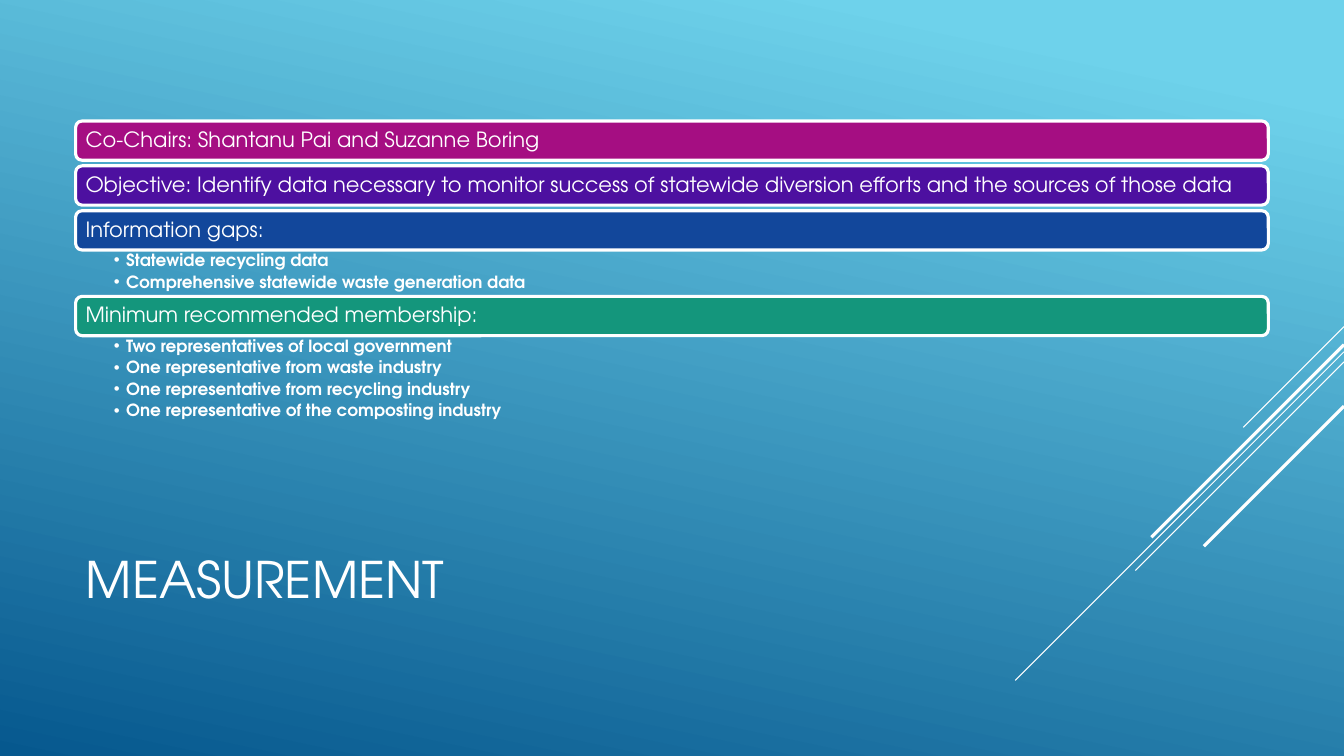
from lxml.etree import SubElement
from pptx import Presentation
from pptx.dml.color import RGBColor
from pptx.enum.shapes import MSO_CONNECTOR, MSO_SHAPE
from pptx.enum.text import MSO_ANCHOR, MSO_AUTO_SIZE, PP_ALIGN
from pptx.oxml.ns import qn
from pptx.util import Inches, Pt

WHITE = RGBColor(0xFF, 0xFF, 0xFF)
SKY = RGBColor(0x6E, 0xD2, 0xEB)
NAVY = RGBColor(0x06, 0x58, 0x8E)
PLUM = RGBColor(0xA5, 0x0E, 0x82)
VIOLET = RGBColor(0x4D, 0x10, 0xA0)
BLUE = RGBColor(0x12, 0x47, 0x9B)
GREEN = RGBColor(0x14, 0x96, 0x7C)
FONT = "TeX Gyre Adventor"
LEFT, WIDTH = 0.75, 11.83
BAR, STEP, ROW = 0.39, 0.445, 0.23


def place(shape, left, top, width, height):
    shape.left, shape.top = Inches(left), Inches(top)
    shape.width, shape.height = Inches(width), Inches(height)


def write(shape, lines, size, bold, insets, anchor, spacing):
    frame = shape.text_frame
    frame.text = "\n".join(lines)
    sides = dict(zip(("left", "top", "right", "bottom"), insets))
    for side, gap in sides.items():
        setattr(frame, "margin_" + side, Inches(gap))
    frame.word_wrap = True
    frame.auto_size = MSO_AUTO_SIZE.NONE
    frame.vertical_anchor = anchor
    for para in frame.paragraphs:
        for name, value in spacing.items():
            setattr(para, name, value)
        style = {"name": FONT, "size": Pt(size), "bold": bold}
        for name, value in style.items():
            setattr(para.runs[0].font, name, value)
        para.runs[0].font.color.rgb = WHITE


deck = Presentation()
deck.slide_width, deck.slide_height = Inches(13.33), Inches(7.5)
slide = deck.slides.add_slide(deck.slide_layouts[3])
title, *bodies = slide.placeholders

# Background gradient
back = slide.background.fill
back.gradient()
back.gradient_angle = 360 - 102
for stop, (spot, color) in zip(back.gradient_stops, [(0.1, SKY), (1, NAVY)]):
    stop.position = spot
    stop.color.rgb = color

# Diagonal lines from the right edge: start height, run, weight
for top, run, weight in [(3.24, 1, 0.75), (3.49, 3.26, 0.75), (3.59, 2.07, 0.75),
                         (3.42, 1.91, 2.25), (4.03, 1.39, 2.25)]:
    line = slide.shapes.add_connector(
        MSO_CONNECTOR.STRAIGHT, Inches(13.33), Inches(top),
        Inches(13.33 - run), Inches(top + run))
    line.line.color.rgb = WHITE
    line.line.width = Pt(weight)
    SubElement(line._element.spPr, qn("a:effectLst"))

# Title
place(title, LEFT, 4.91, 9.33, 1.65)
write(title, ["MEASUREMENT"], 36, False, (0.1, 0.05, 0.1, 0.05),
      MSO_ANCHOR.MIDDLE, {"alignment": PP_ALIGN.LEFT})

# Coloured bars, some followed by a bullet list
sections = [
    (PLUM, "Co-Chairs: Shantanu Pai and Suzanne Boring", []),
    (VIOLET, "Objective: Identify data necessary to monitor success of statewide "
     "diversion efforts and the sources of those data", []),
    (BLUE, "Information gaps:",
     ["Statewide recycling data",
      "Comprehensive statewide waste generation data"]),
    (GREEN, "Minimum recommended membership:",
     ["Two representatives of local government",
      "One representative from waste industry",
      "One representative from recycling industry",
      "One representative of the composting industry"]),
]
top = 1.2
for color, head, items in sections:
    bar = slide.shapes.add_shape(
        MSO_SHAPE.ROUNDED_RECTANGLE, Inches(LEFT), Inches(top),
        Inches(WIDTH), Inches(BAR))
    bar.shadow.inherit = False
    bar.fill.solid()
    bar.fill.fore_color.rgb = color
    bar.line.color.rgb = WHITE
    bar.line.width = Pt(2.25)
    write(bar, [head], 15, False, (0.08, 0.06, 0.08, 0.06), MSO_ANCHOR.MIDDLE,
          {"alignment": PP_ALIGN.LEFT, "line_spacing": 0.9})
    if not items:
        top += STEP
        continue
    body = bodies.pop(0)
    place(body, LEFT, top + BAR, WIDTH, ROW * len(items))
    write(body, items, 12, True, (0.38, 0.02, 0.12, 0.02), MSO_ANCHOR.TOP,
          {"level": 1, "line_spacing": 0.9, "space_before": Pt(0),
           "space_after": Pt(2.4)})
    for para in body.text_frame.paragraphs:
        props = para._p.get_or_add_pPr()
        props.set("marL", str(Inches(0.12)))
        props.set("indent", str(-Inches(0.12)))
        SubElement(props, qn("a:buChar"), char="•")
    top += BAR + ROW * len(items)

deck.save("out.pptx")
